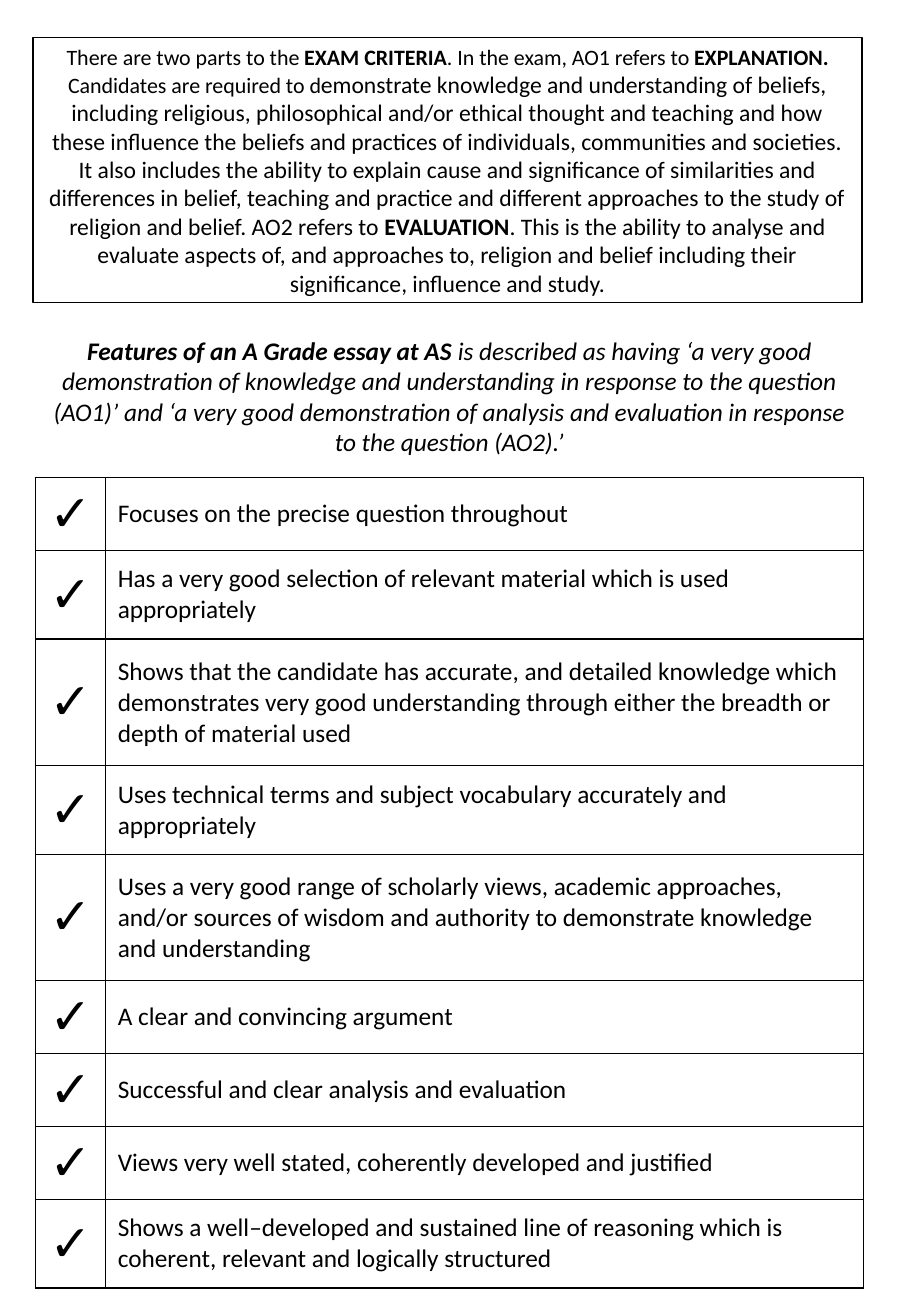
from lxml.etree import SubElement
from pptx import Presentation
from pptx.dml.color import RGBColor
from pptx.enum.shapes import MSO_SHAPE
from pptx.enum.text import MSO_ANCHOR, MSO_AUTO_SIZE, PP_ALIGN
from pptx.oxml.ns import qn
from pptx.util import Inches, Pt

BLACK = RGBColor(0x00, 0x00, 0x00)
WHITE = RGBColor(0xFF, 0xFF, 0xFF)

EXAM_CRITERIA = [
    ("There are two parts to the ", 13, False),
    ("EXAM CRITERIA", 13, True),
    (". In the exam, AO1 refers to ", 13, False),
    ("EXPLANATION. ", 13, True),
    ("Candidates are required to d", 13, False),
    ("emonstrate knowledge and understanding of beliefs, including religious, "
     "philosophical and/or ethical thought and teaching and how these influence "
     "the beliefs and practices of individuals, communities and societies. It also "
     "includes the ability to explain cause and significance of similarities and "
     "differences in belief, teaching and practice and different approaches to the "
     "study of religion and belief. AO2 refers to ", 14, False),
    ("EVALUATION", 14, True),
    (". This is the ability to analyse and evaluate aspects of, and approaches to, "
     "religion and belief including their significance, influence and study.", 14, False),
]
GRADE_SUMMARY = [
    ("Features of an A Grade essay at AS ", 15, True),
    ("is described as having ‘a very good demonstration of knowledge and understanding "
     "in response to the question (AO1)’ and ‘a very good demonstration of analysis "
     "and evaluation in response to the question (AO2).’", 15, False),
]
ONE_LINE, TWO_LINES, THREE_LINES = 0.54, 0.73, 1.04
FEATURES = [
    ("Focuses on the precise question throughout", ONE_LINE),
    ("Has a very good selection of relevant material which is used appropriately", TWO_LINES),
    ("Shows that the candidate has accurate, and detailed knowledge which demonstrates "
     "very good understanding through either the breadth or depth of material used",
     THREE_LINES),
    ("Uses technical terms and subject vocabulary accurately and appropriately", TWO_LINES),
    ("Uses a very good range of scholarly views, academic approaches, and/or sources of "
     "wisdom and authority to demonstrate knowledge and understanding", THREE_LINES),
    ("A clear and convincing argument", ONE_LINE),
    ("Successful and clear analysis and evaluation", ONE_LINE),
    ("Views very well stated, coherently developed and justified", ONE_LINE),
    ("Shows a well–developed and sustained line of reasoning which is coherent, "
     "relevant and logically structured", TWO_LINES),
]


def add_text(paragraph, text, *, size, bold=False, italic=False, font="Calibri", color=BLACK):
    run = paragraph.add_run()
    run.text = text
    run.font.name = font
    run.font.size = Pt(size)
    run.font.bold = bold
    run.font.italic = italic
    run.font.color.rgb = color


class Handout:
    def __init__(self, slide, line_width=1):
        self.slide = slide
        self.line_width = Pt(line_width)

    def fill_frame(self, frame, runs, align=PP_ALIGN.CENTER, italic=False):
        frame.word_wrap = True
        paragraph = frame.paragraphs[0]
        paragraph.alignment = align
        for text, size, bold in runs:
            add_text(paragraph, text, size=size, bold=bold, italic=italic)

    def framed_box(self, left, top, width, height, runs):
        shape = self.slide.shapes.add_shape(
            MSO_SHAPE.RECTANGLE, Inches(left), Inches(top), Inches(width), Inches(height))
        shape.shadow.inherit = False
        shape.fill.solid()
        shape.fill.fore_color.rgb = WHITE
        shape.line.color.rgb = BLACK
        shape.line.width = self.line_width
        shape.text_frame.vertical_anchor = MSO_ANCHOR.MIDDLE
        self.fill_frame(shape.text_frame, runs)

    def text_box(self, left, top, width, height, runs):
        shape = self.slide.shapes.add_textbox(
            Inches(left), Inches(top), Inches(width), Inches(height))
        self.fill_frame(shape.text_frame, runs, italic=True)
        shape.text_frame.auto_size = MSO_AUTO_SIZE.SHAPE_TO_FIT_TEXT

    def cell(self, cell, text, size, bold, align):
        cell.vertical_anchor = MSO_ANCHOR.MIDDLE
        self.fill_frame(cell.text_frame, [(text, size, bold)], align)
        properties = cell._tc.get_or_add_tcPr()
        for side in ("a:lnL", "a:lnR", "a:lnT", "a:lnB"):
            border = SubElement(properties, qn(side), w=str(self.line_width))
            fill = SubElement(border, qn("a:solidFill"))
            SubElement(fill, qn("a:srgbClr"), val=str(BLACK))
        cell.fill.background()

    def checklist(self, left, top, widths, features):
        height = sum(row_height for _, row_height in features)
        table = self.slide.shapes.add_table(
            len(features), len(widths), Inches(left), Inches(top),
            Inches(sum(widths)), Inches(height)).table
        table.first_row = False
        table.horz_banding = False
        for column, width in zip(table.columns, widths):
            column.width = Inches(width)
        for row, (feature, row_height) in zip(table.rows, features):
            row.height = Inches(row_height)
            self.cell(row.cells[0], "✓", 30, True, PP_ALIGN.CENTER)
            self.cell(row.cells[1], feature, 15, False, PP_ALIGN.LEFT)


def main():
    presentation = Presentation()
    presentation.slide_width = Inches(7.5)
    presentation.slide_height = Inches(10.83)
    handout = Handout(presentation.slides.add_slide(presentation.slide_layouts[6]))
    handout.framed_box(0.27, 0.31, 6.83, 2.18, EXAM_CRITERIA)
    handout.text_box(0.29, 2.71, 6.82, 1.11, GRADE_SUMMARY)
    handout.checklist(0.29, 3.93, (0.58, 6.24), FEATURES)
    presentation.save("out.pptx")


if __name__ == "__main__":
    main()
